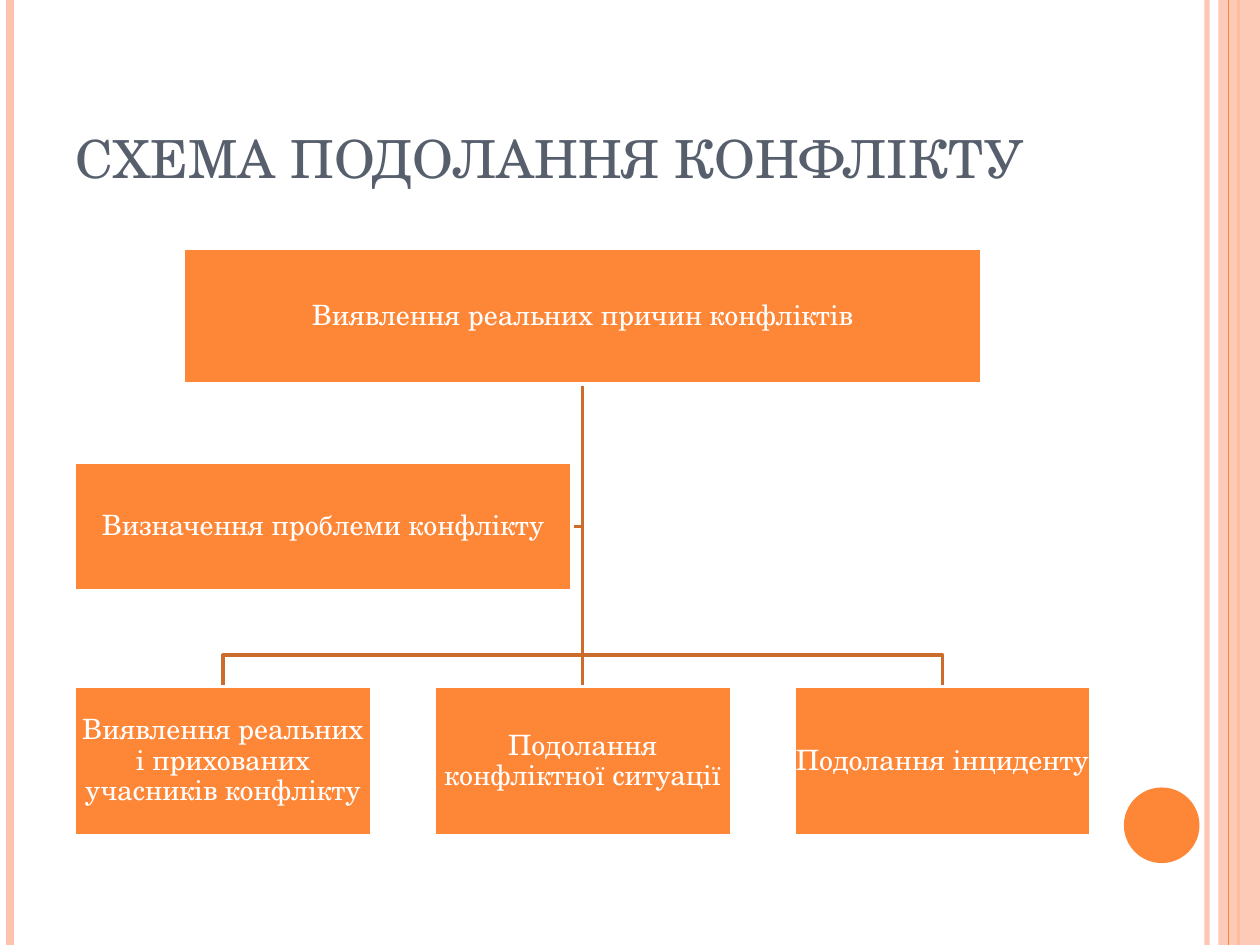
"""Build a slide with a hierarchy diagram of the steps for overcoming a conflict."""
import pptx
import pptx.util
import pptx.dml.color
import pptx.enum.shapes
import pptx.enum.text
import pptx.oxml
import pptx.oxml.ns

WIDTH, HEIGHT = 10, 7.5
FONT = "TeX Gyre Schola"
ORANGE, PINK, BROWN, SLATE, WHITE = "FE8637", "FEC3AE", "CB6B2C", "575F6D", "FFFFFF"

TITLE = "СХЕМА ПОДОЛАННЯ КОНФЛІКТУ"
CAUSES = "Виявлення реальних причин конфліктів"
PROBLEM = "Визначення проблеми конфлікту"
STEPS = [
    "Виявлення реальних і прихованих учасників конфлікту",
    "Подолання конфліктної ситуації",
    "Подолання інциденту",
]
BACK_STRIPES = [(9.58, PINK, 3, 93), (0.08, PINK, 4.5, 100), (9.83, ORANGE, 1.5, 100)]
FRONT_STRIPE = (9.75, ORANGE, 0.75, 100)

LEFT, STEP_WIDTH, STEP_PITCH = 0.59, 2.36, 2.855
STEP_TOP, STEP_HEIGHT = 5.45, 1.18
CENTER = LEFT + STEP_PITCH + STEP_WIDTH / 2
CAUSES_WIDTH, CAUSES_TOP, CAUSES_HEIGHT = 6.34, 1.97, 1.08
PROBLEM_WIDTH, PROBLEM_TOP, PROBLEM_HEIGHT = 3.95, 3.67, 1.02
TRUNK_TOP, BRANCH = CAUSES_TOP + CAUSES_HEIGHT, 5.2

SHAPES = pptx.enum.shapes.MSO_SHAPE
ANCHOR = pptx.enum.text.MSO_ANCHOR
ALIGN = pptx.enum.text.PP_ALIGN


def inches(*values):
    return [pptx.util.Inches(value) for value in values]


def paint(color_format, color, opacity=100):
    color_format.rgb = pptx.dml.color.RGBColor.from_string(color)
    if opacity < 100:
        node = color_format._xFill.find(pptx.oxml.ns.qn("a:srgbClr"))
        alpha = pptx.oxml.parse_xml(
            f'<a:alpha {pptx.oxml.ns.nsdecls("a")} val="{opacity * 1000}"/>')
        node.append(alpha)


def fill_shape(shape, color, opacity=100):
    shape.shadow.inherit = False
    shape.fill.solid()
    paint(shape.fill.fore_color, color, opacity)
    shape.line.fill.background()


def stroke(line, color, width, opacity=100):
    line.width = pptx.util.Pt(width)
    line.fill.solid()
    paint(line.fill.fore_color, color, opacity)


def add_line(slide, start, end, color, width, opacity=100):
    line = slide.shapes.add_connector(
        pptx.enum.shapes.MSO_CONNECTOR.STRAIGHT, *inches(*start, *end))
    stroke(line.line, color, width, opacity)
    line._element.spPr.append(
        pptx.oxml.parse_xml(f'<a:effectLst {pptx.oxml.ns.nsdecls("a")}/>'))


def add_stripe(slide, x, color, width, opacity):
    add_line(slide, (x, 0), (x, HEIGHT), color, width, opacity)


def add_elbow(slide, points):
    start, *rest = [inches(*point) for point in points]
    builder = slide.shapes.build_freeform(*start)
    builder.add_line_segments(rest, close=False)
    elbow = builder.convert_to_shape()
    elbow.shadow.inherit = False
    elbow.fill.background()
    stroke(elbow.line, BROWN, 2)


def write(frame, text, size, color, anchor, align):
    frame.word_wrap = True
    frame.vertical_anchor = anchor
    para = frame.paragraphs[0]
    para.alignment = align
    span = para.add_run()
    span.text = text
    span.font.name = FONT
    span.font.size = pptx.util.Pt(size)
    paint(span.font.color, color)
    return para


def add_box(slide, text, *place):
    box = slide.shapes.add_shape(SHAPES.RECTANGLE, *inches(*place))
    fill_shape(box, ORANGE)
    stroke(box.line, WHITE, 2)
    frame = box.text_frame
    frame.margin_left = frame.margin_right = pptx.util.Inches(0.01)
    frame.margin_top = frame.margin_bottom = pptx.util.Inches(0.01)
    para = write(frame, text, 16, WHITE, ANCHOR.MIDDLE, ALIGN.CENTER)
    para.line_spacing = 0.9


def add_frame(slide):
    for stripe in BACK_STRIPES:
        add_stripe(slide, *stripe)
    band = slide.shapes.add_shape(SHAPES.RECTANGLE, *inches(9.67, 0, 0.33, HEIGHT))
    fill_shape(band, PINK, 87)
    add_stripe(slide, *FRONT_STRIPE)
    dot = slide.shapes.add_shape(SHAPES.OVAL, *inches(8.92, 6.25, 0.6, 0.6))
    fill_shape(dot, ORANGE)


def add_diagram(slide):
    middle = PROBLEM_TOP + PROBLEM_HEIGHT / 2
    trunk = (CENTER, TRUNK_TOP)
    add_elbow(slide, [trunk, (CENTER, middle), (LEFT + PROBLEM_WIDTH, middle)])
    for side in (1, -1):
        x = CENTER + side * STEP_PITCH
        add_elbow(slide, [trunk, (CENTER, BRANCH), (x, BRANCH), (x, STEP_TOP)])
    add_line(slide, trunk, (CENTER, STEP_TOP), BROWN, 2)

    add_box(slide, CAUSES, CENTER - CAUSES_WIDTH / 2, CAUSES_TOP,
            CAUSES_WIDTH, CAUSES_HEIGHT)
    for column, step in enumerate(STEPS):
        add_box(slide, step, LEFT + column * STEP_PITCH, STEP_TOP,
                STEP_WIDTH, STEP_HEIGHT)
    add_box(slide, PROBLEM, LEFT, PROBLEM_TOP, PROBLEM_WIDTH, PROBLEM_HEIGHT)


def main():
    deck = pptx.Presentation()
    deck.slide_width, deck.slide_height = inches(WIDTH, HEIGHT)
    page = deck.slides.add_slide(deck.slide_layouts[6])
    add_frame(page)
    title = page.shapes.add_textbox(*inches(0.5, 0.3, 8.17, 1.25))
    write(title.text_frame, TITLE, 30, SLATE, ANCHOR.BOTTOM, ALIGN.LEFT)
    add_diagram(page)
    deck.save("out.pptx")


if __name__ == "__main__":
    main()
